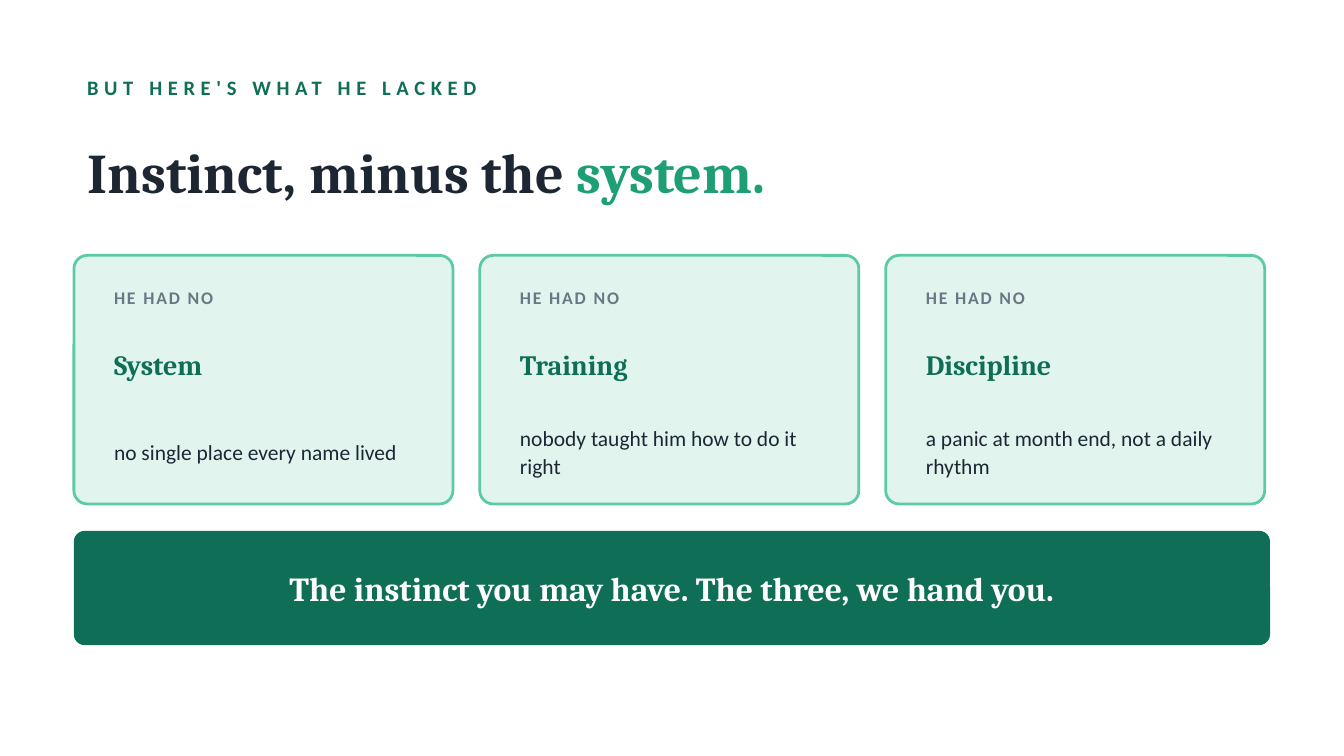
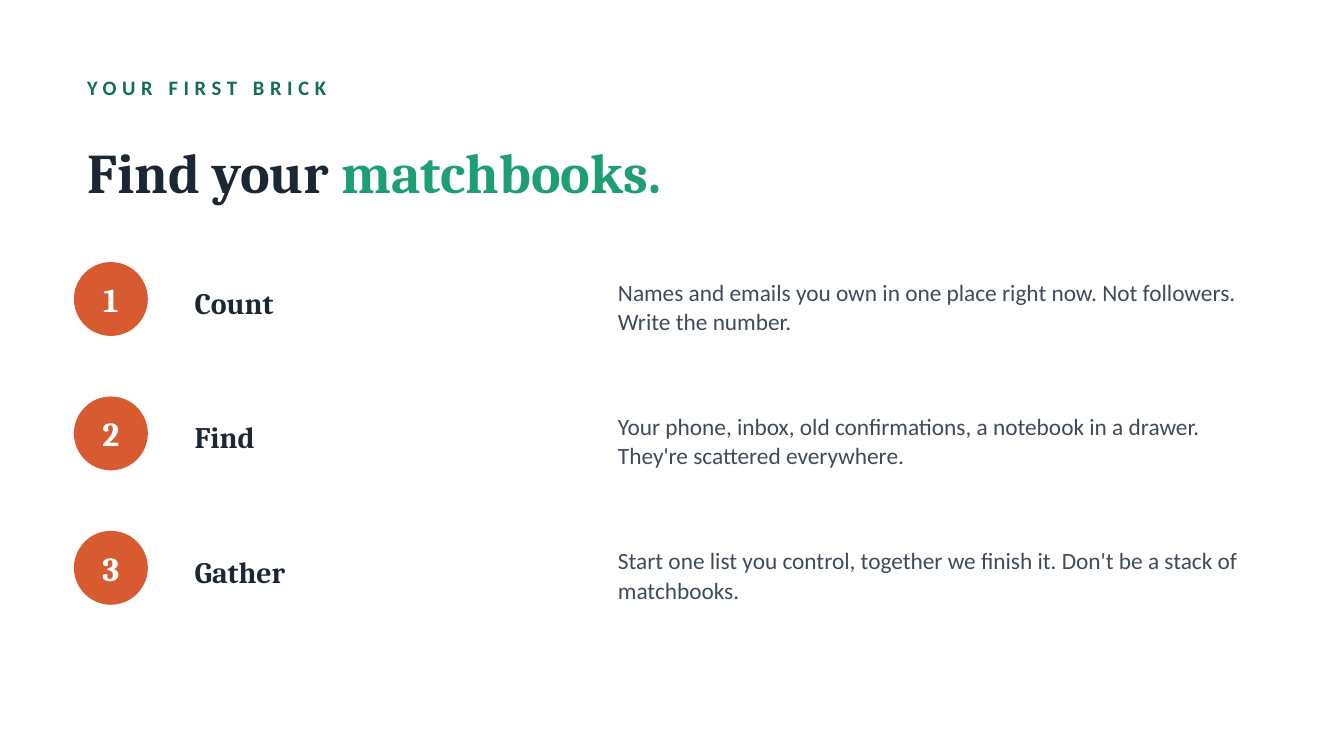
from dataclasses import dataclass

from pptx import Presentation
from pptx.dml.color import RGBColor
from pptx.enum.shapes import MSO_SHAPE as Preset
from pptx.enum.text import MSO_ANCHOR as Anchor, MSO_AUTO_SIZE as AutoSize, PP_ALIGN as Align
from pptx.util import Pt

COLORS = {
    "ink": "1C2733",
    "forest": "0F6E56",
    "green": "1D9E75",
    "mint": "E1F5EE",
    "mint_edge": "5DCAA5",
    "muted": "6B7785",
    "slate": "3F4B59",
    "orange": "D85A30",
    "white": "FFFFFF",
}
SANS, SERIF = "Calibri", "Cambria"


@dataclass
class Box:
    """A rectangle in points."""
    left: float
    top: float
    width: float
    height: float

    def inner(self, left, top, width, height):
        """Return a box offset from this one's top left corner."""
        return Box(self.left + left, self.top + top, width, height)

    def lengths(self):
        """Return left, top, width and height as lengths."""
        return Pt(self.left), Pt(self.top), Pt(self.width), Pt(self.height)


@dataclass
class Style:
    """The look of a run of text."""
    font: str
    size: float
    color: str
    bold: bool = True
    tracking: float = 0


EYEBROW = Style(SANS, 11, "forest", tracking=3)
TITLE = Style(SERIF, 30, "ink")
TITLE_ACCENT = Style(SERIF, 30, "green")
CARD_LABEL = Style(SANS, 9.5, "muted", tracking=1)
CARD_NAME = Style(SERIF, 15, "forest")
CARD_DETAIL = Style(SANS, 11.5, "ink", bold=False)
ON_COLOR = Style(SERIF, 18, "white")
STEP_NAME = Style(SERIF, 16, "ink")
STEP_DETAIL = Style(SANS, 12.5, "slate", bold=False)

EYEBROW_BOX = Box(39.6, 36, 640.8, 21.6)
TITLE_BOX = Box(39.6, 61.2, 640.8, 61.2)
CARDS_BOX = Box(39.6, 136.8, 637.92, 133.2)
BANNER_BOX = Box(39.6, 284.4, 640.8, 61.2)
STEPS_BOX = Box(39.6, 136.8, 644.4, 216)
CARD_GAP = 14.4
CIRCLE = 39.6


def color(name):
    """Return a palette colour."""
    return RGBColor.from_string(COLORS[name])


def write(shape, runs, align=Align.LEFT, spacing=None):
    """Fill a shape with one vertically centred paragraph of styled runs."""
    frame = shape.text_frame
    frame.word_wrap = True
    frame.auto_size = AutoSize.NONE
    frame.vertical_anchor = Anchor.MIDDLE
    paragraph = frame.paragraphs[0]
    paragraph.alignment = align
    if spacing:
        paragraph.line_spacing = spacing
    for text, style in runs:
        run = paragraph.add_run()
        run.text = text
        run.font.name = style.font
        run.font.size = Pt(style.size)
        run.font.bold = style.bold
        run.font.color.rgb = color(style.color)
        if style.tracking:
            run._r.get_or_add_rPr().set("spc", str(round(style.tracking * 100)))


def add_text(slide, box, text, style, spacing=None):
    """Add a text box."""
    write(slide.shapes.add_textbox(*box.lengths()), [(text, style)], spacing=spacing)


def add_filled(slide, preset, box, fill, edge=None, radius=None):
    """Add a flat preset shape, with an optional outline and corner radius."""
    shape = slide.shapes.add_shape(preset, *box.lengths())
    shape.shadow.inherit = False
    shape.fill.solid()
    shape.fill.fore_color.rgb = color(fill)
    if edge:
        shape.line.color.rgb = color(edge)
        shape.line.width = Pt(1.5)
    else:
        shape.line.fill.background()
    if radius:
        shape.adjustments[0] = radius / min(box.width, box.height)
    return shape


def add_headed_slide(presentation, eyebrow, title, accent):
    """Add a slide with an eyebrow line and a two-colour title."""
    slide = presentation.slides.add_slide(presentation.slide_layouts[5])
    heading = slide.shapes.title
    heading.left, heading.top, heading.width, heading.height = TITLE_BOX.lengths()
    write(heading, [(title, TITLE), (accent, TITLE_ACCENT)])
    add_text(slide, EYEBROW_BOX, eyebrow, EYEBROW)
    return slide


def add_card(slide, box, name, detail):
    """Add one outlined card naming a missing quality."""
    add_filled(slide, Preset.ROUNDED_RECTANGLE, box, "mint", "mint_edge", radius=7.2)
    add_text(slide, box.inner(14.4, 11.52, 176.4, 21.6), "HE HAD NO", CARD_LABEL)
    add_text(slide, box.inner(14.4, 33.12, 176.4, 50.4), name, CARD_NAME)
    add_text(slide, box.inner(14.4, 84.96, 176.4, 39.6), detail, CARD_DETAIL, 1.08)


def add_cards(slide, box, cards):
    """Lay cards out in equal columns."""
    width = (box.width - CARD_GAP * (len(cards) - 1)) / len(cards)
    for index, (name, detail) in enumerate(cards):
        card_box = box.inner(index * (width + CARD_GAP), 0, width, box.height)
        add_card(slide, card_box, name, detail)


def add_banner(slide, box, text):
    """Add the closing banner."""
    banner = add_filled(slide, Preset.ROUNDED_RECTANGLE, box, "forest", radius=5.76)
    write(banner, [(text, ON_COLOR)], Align.CENTER)


def add_step(slide, box, number, name, detail):
    """Add a numbered circle with its name and explanation."""
    circle_box = box.inner(0, 3.6, CIRCLE, CIRCLE)
    circle = add_filled(slide, Preset.OVAL, circle_box, "orange")
    circle.text_frame.margin_left = circle.text_frame.margin_right = 0
    write(circle, [(str(number), ON_COLOR)], Align.CENTER)
    add_text(slide, box.inner(57.6, 0, 216, 50.4), name, STEP_NAME)
    add_text(slide, box.inner(284.4, 0, 360, 54), detail, STEP_DETAIL, 1.05)


def add_steps(slide, box, steps):
    """Stack numbered steps in equal rows."""
    height = box.height / len(steps)
    for index, (name, detail) in enumerate(steps):
        row = box.inner(0, index * height, box.width, height)
        add_step(slide, row, index + 1, name, detail)


def build_lacked_slide(presentation):
    """Build the slide on the three missing qualities."""
    slide = add_headed_slide(
        presentation, "BUT HERE'S WHAT HE LACKED", "Instinct, minus the ", "system.")
    add_cards(slide, CARDS_BOX, [
        ("System", "no single place every name lived"),
        ("Training", "nobody taught him how to do it right"),
        ("Discipline", "a panic at month end, not a daily rhythm"),
    ])
    add_banner(slide, BANNER_BOX, "The instinct you may have. The three, we hand you.")


def build_first_brick_slide(presentation):
    """Build the slide with the three first steps."""
    slide = add_headed_slide(
        presentation, "YOUR FIRST BRICK", "Find your ", "matchbooks.")
    add_steps(slide, STEPS_BOX, [
        ("Count", "Names and emails you own in one place right now. "
                  "Not followers. Write the number."),
        ("Find", "Your phone, inbox, old confirmations, a notebook in a drawer. "
                 "They're scattered everywhere."),
        ("Gather", "Start one list you control, together we finish it. "
                   "Don't be a stack of matchbooks."),
    ])


def main():
    """Build and save the presentation."""
    presentation = Presentation()
    presentation.slide_width = Pt(720)
    presentation.slide_height = Pt(405)
    build_lacked_slide(presentation)
    build_first_brick_slide(presentation)
    presentation.save("out.pptx")


if __name__ == "__main__":
    main()
